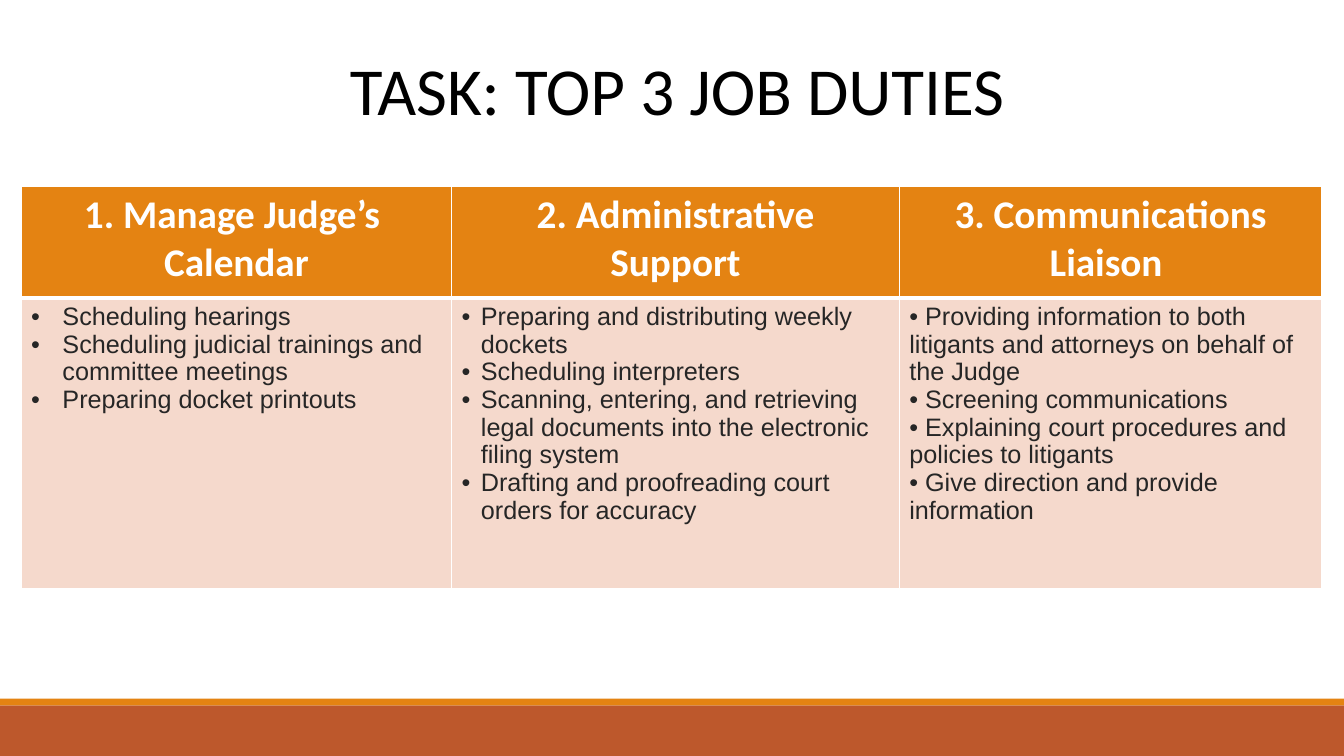
from dataclasses import dataclass

from lxml.etree import SubElement
from pptx import Presentation
from pptx.dml.color import RGBColor
from pptx.enum.shapes import MSO_SHAPE
from pptx.enum.text import PP_ALIGN
from pptx.oxml.ns import qn
from pptx.slide import Slide
from pptx.table import _Cell
from pptx.text.text import _Paragraph
from pptx.util import Emu, Inches, Pt

SLIDE_WIDTH, SLIDE_HEIGHT = Inches(13.33), Inches(7.5)
ORANGE, RUST, PEACH = "E48312", "BD582C", "F5D9CC"
WHITE, BLACK, CHARCOAL = "FFFFFF", "000000", "262626"
THIN, THICK = 1, 3  # cell border widths in points


@dataclass
class Bar:
    top: float  # shares of the slide height
    height: float
    color: str


@dataclass
class Duty:
    width: float  # column width in inches
    indent: float  # hanging indent in inches
    heading: str
    tasks: list[str]


BARS = [Bar(0.933, 0.067, RUST), Bar(0.924, 0.009, ORANGE)]
ROW_HEIGHTS = [1.11, 2.88]
DUTIES = [
    Duty(4.27, 0.31, "1. Manage Judge’s \nCalendar", [
        "Scheduling hearings",
        "Scheduling judicial trainings and committee meetings",
        "Preparing docket printouts",
    ]),
    Duty(4.44, 0.19, "2. Administrative\nSupport", [
        "Preparing and distributing weekly dockets",
        "Scheduling interpreters",
        "Scanning, entering, and retrieving legal documents into the electronic filing system",
        "Drafting and proofreading court orders for accuracy",
    ]),
    Duty(4.19, 0, "3. Communications\nLiaison ", [
        " Providing information to both litigants and attorneys on behalf of the Judge",
        " Screening communications",
        " Explaining court procedures and policies to litigants",
        " Give direction and provide information",
    ]),
]


def rgb(color: str) -> RGBColor:
    return RGBColor.from_string(color)


def share(length: int, part: float) -> Emu:
    return Emu(round(length * part))


def style_runs(paragraph: _Paragraph, font: str, size: float, color: str, bold: bool = False) -> None:
    for run in paragraph.runs:
        run.font.name = font
        run.font.size = Pt(size)
        run.font.bold = bold
        run.font.color.rgb = rgb(color)


def add_bullet(paragraph: _Paragraph, indent: float) -> None:
    properties = paragraph._p.get_or_add_pPr()
    properties.set("marL", str(Inches(indent)))
    properties.set("indent", str(-Inches(indent)))
    SubElement(properties, qn("a:buFont"), typeface="Arial")
    SubElement(properties, qn("a:buChar"), char="•")


def style_cell(cell: _Cell, color: str, top: float, bottom: float) -> None:
    properties = cell._tc.get_or_add_tcPr()
    for side, width in (("L", THIN), ("R", THIN), ("T", top), ("B", bottom)):
        line = SubElement(properties, qn(f"a:ln{side}"), w=str(Pt(width)))
        SubElement(SubElement(line, qn("a:solidFill")), qn("a:srgbClr"), val=WHITE)
    cell.fill.solid()
    cell.fill.fore_color.rgb = rgb(color)


def add_bar(slide: Slide, bar: Bar) -> None:
    shape = slide.shapes.add_shape(
        MSO_SHAPE.RECTANGLE, 0, share(SLIDE_HEIGHT, bar.top),
        SLIDE_WIDTH, share(SLIDE_HEIGHT, bar.height))
    shape.shadow.inherit = False
    shape.fill.solid()
    shape.fill.fore_color.rgb = rgb(bar.color)
    shape.line.fill.background()


def add_title(slide: Slide, text: str) -> None:
    shape = slide.shapes.add_textbox(
        share(SLIDE_WIDTH, 0.159), share(SLIDE_HEIGHT, 0.057),
        share(SLIDE_WIDTH, 0.69), share(SLIDE_HEIGHT, 0.121))
    shape.text_frame.word_wrap = True
    shape.text_frame.text = text
    paragraph = shape.text_frame.paragraphs[0]
    paragraph.alignment = PP_ALIGN.CENTER
    style_runs(paragraph, "Calibri", 48, BLACK)


def add_duty_table(slide: Slide) -> None:
    table = slide.shapes.add_table(
        len(ROW_HEIGHTS), len(DUTIES), Inches(0.21), Inches(1.85),
        Inches(sum(duty.width for duty in DUTIES)), Inches(sum(ROW_HEIGHTS))).table
    for row, height in zip(table.rows, ROW_HEIGHTS):
        row.height = Inches(height)

    for index, duty in enumerate(DUTIES):
        table.columns[index].width = Inches(duty.width)

        # Heading cell
        heading = table.cell(0, index)
        style_cell(heading, ORANGE, THIN, THICK)
        heading.text_frame.text = duty.heading
        for paragraph in heading.text_frame.paragraphs:
            paragraph.alignment = PP_ALIGN.CENTER
            style_runs(paragraph, "Calibri", 28, WHITE, bold=True)

        # Bulleted task cell
        tasks = table.cell(1, index)
        style_cell(tasks, PEACH, THICK, THIN)
        tasks.text_frame.text = "\n".join(duty.tasks)
        for paragraph in tasks.text_frame.paragraphs:
            paragraph.line_spacing = 0.98
            add_bullet(paragraph, duty.indent)
            style_runs(paragraph, "Arial", 18, CHARCOAL)


def main() -> None:
    presentation = Presentation()
    presentation.slide_width, presentation.slide_height = SLIDE_WIDTH, SLIDE_HEIGHT
    slide = presentation.slides.add_slide(presentation.slide_layouts[6])

    # Footer bars
    for bar in BARS:
        add_bar(slide, bar)

    # Content
    add_duty_table(slide)
    add_title(slide, "TASK: TOP 3 JOB DUTIES")

    presentation.save("out.pptx")


if __name__ == "__main__":
    main()
